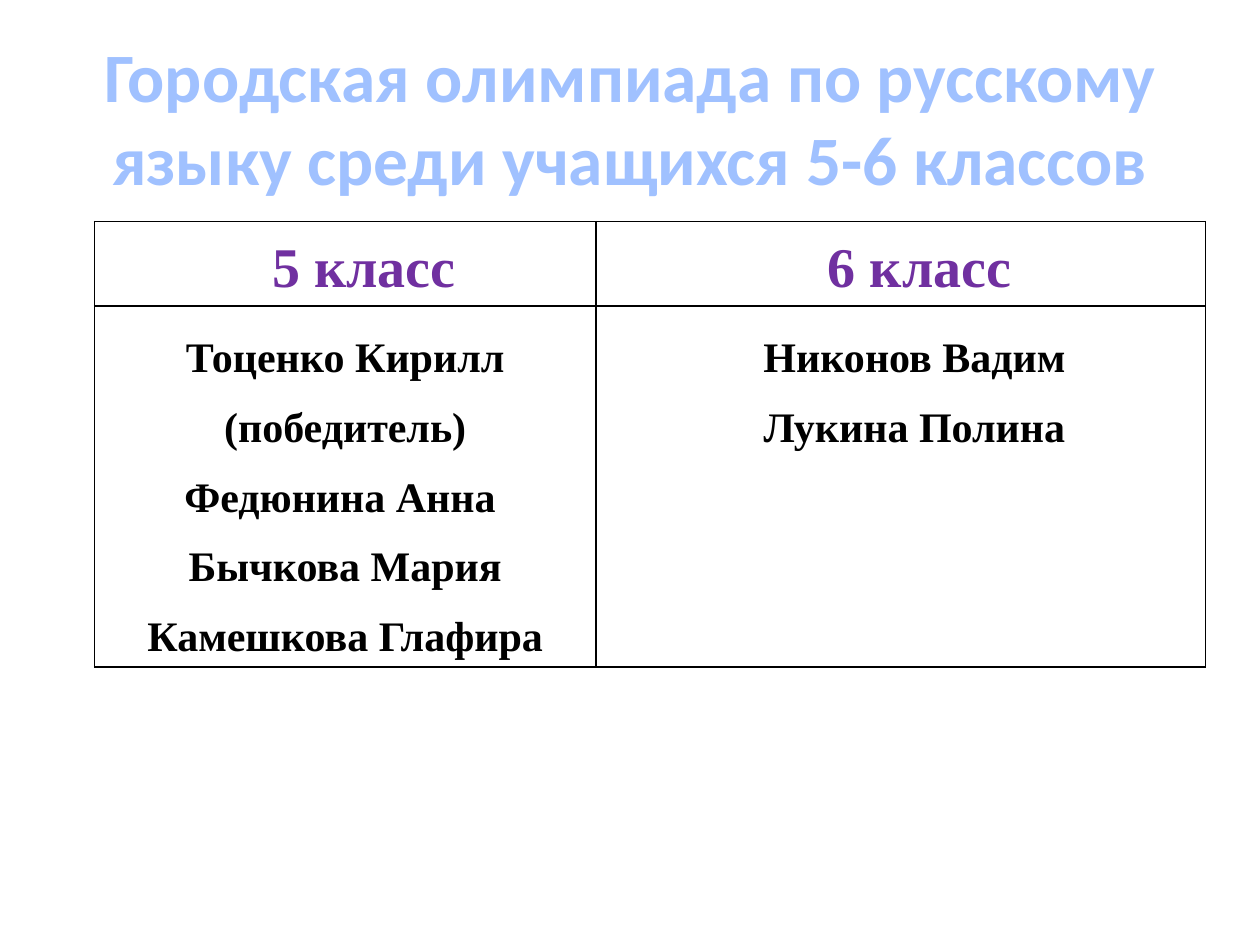
"""Build the slide listing the winners of the school Russian language olympiad."""
from dataclasses import dataclass

from lxml import etree
from pptx import Presentation
from pptx.dml.color import RGBColor
from pptx.enum.text import MSO_ANCHOR, MSO_AUTO_SIZE, PP_ALIGN
from pptx.oxml.ns import qn
from pptx.util import Pt

CENTER = PP_ALIGN.CENTER
MIDDLE = MSO_ANCHOR.MIDDLE
NO_AUTOFIT = MSO_AUTO_SIZE.NONE
TITLE_ONLY = 5


@dataclass(frozen=True)
class Theme:
    title_font: str = "Calibri"
    table_font: str = "Times New Roman"
    title_color: str = "A0C1FF"
    header_color: str = "7030A0"
    name_color: str = "000000"
    border_color: str = "000000"
    title_size: float = 39.6
    header_size: float = 32
    name_size: float = 24
    border_width: float = 1


@dataclass(frozen=True)
class Grade:
    header: str
    names: tuple[str, ...]
    width: float
    name_indent: float


THEME = Theme()
HEADER_INDENT = 21.6
ROW_HEIGHTS = (48, 206)
TABLE_LEFT, TABLE_TOP = 54, 126.7
GRADES = (
    Grade("5 класс", ("Тоценко Кирилл (победитель)", "Федюнина Анна ",
                      "Бычкова Мария", "Камешкова Глафира"), 286.5, 0),
    Grade("6 класс", ("Никонов Вадим ", "Лукина Полина "), 348.5, HEADER_INDENT),
)


def write(tf, *lines: str, font: str, size: float, color: str,
          spacing: float | None = None, indent: float = 0) -> None:
    """Fill a text frame with centred bold paragraphs."""
    for i, line in enumerate(lines):
        p = tf.add_paragraph() if i else tf.paragraphs[0]
        p.alignment = CENTER
        if spacing:
            p.line_spacing = spacing
        if indent:
            p._p.get_or_add_pPr().set("indent", str(int(Pt(indent))))
        r = p.add_run()
        r.text = line
        r.font.name = font
        r.font.size = Pt(size)
        r.font.bold = True
        r.font.color.rgb = RGBColor.from_string(color)


def style_cell(cell) -> None:
    """Clear the fill of a cell and draw its four borders."""
    tc_pr = cell._tc.get_or_add_tcPr()
    for side in ("a:lnL", "a:lnR", "a:lnT", "a:lnB"):
        ln = etree.SubElement(tc_pr, qn(side), w=str(int(Pt(THEME.border_width))))
        fill = etree.SubElement(ln, qn("a:solidFill"))
        etree.SubElement(fill, qn("a:srgbClr"), val=THEME.border_color)
    cell.fill.background()


def add_title(s, text: str) -> None:
    """Place and format the slide title."""
    sp = s.shapes.title
    sp.left, sp.top, sp.width, sp.height = Pt(36), Pt(21.6), Pt(648), Pt(90)
    tf = sp.text_frame
    tf.auto_size = NO_AUTOFIT
    tf.vertical_anchor = MIDDLE
    write(tf, text, font=THEME.title_font, size=THEME.title_size,
          color=THEME.title_color)


def add_winners(s, grades: tuple[Grade, ...]) -> None:
    """Add the table with one column of names per grade."""
    width = sum(g.width for g in grades)
    table = s.shapes.add_table(
        len(ROW_HEIGHTS), len(grades), Pt(TABLE_LEFT), Pt(TABLE_TOP),
        Pt(width), Pt(sum(ROW_HEIGHTS))).table
    table.first_row = table.horz_banding = False
    for row, height in zip(table.rows, ROW_HEIGHTS):
        row.height = Pt(height)
    for col, grade in enumerate(grades):
        table.columns[col].width = Pt(grade.width)
        header, body = table.cell(0, col), table.cell(1, col)
        write(header.text_frame, grade.header, font=THEME.table_font,
              size=THEME.header_size, color=THEME.header_color,
              spacing=1.15, indent=HEADER_INDENT)
        write(body.text_frame, *grade.names, font=THEME.table_font,
              size=THEME.name_size, color=THEME.name_color,
              spacing=1.5, indent=grade.name_indent)
        style_cell(header)
        style_cell(body)


def main() -> None:
    """Create the presentation and save it."""
    prs = Presentation()
    prs.slide_width, prs.slide_height = Pt(720), Pt(540)
    s = prs.slides.add_slide(prs.slide_layouts[TITLE_ONLY])
    add_title(s, "Городская олимпиада по русскому языку среди учащихся 5-6 классов")
    add_winners(s, GRADES)
    prs.save("out.pptx")


if __name__ == "__main__":
    main()
